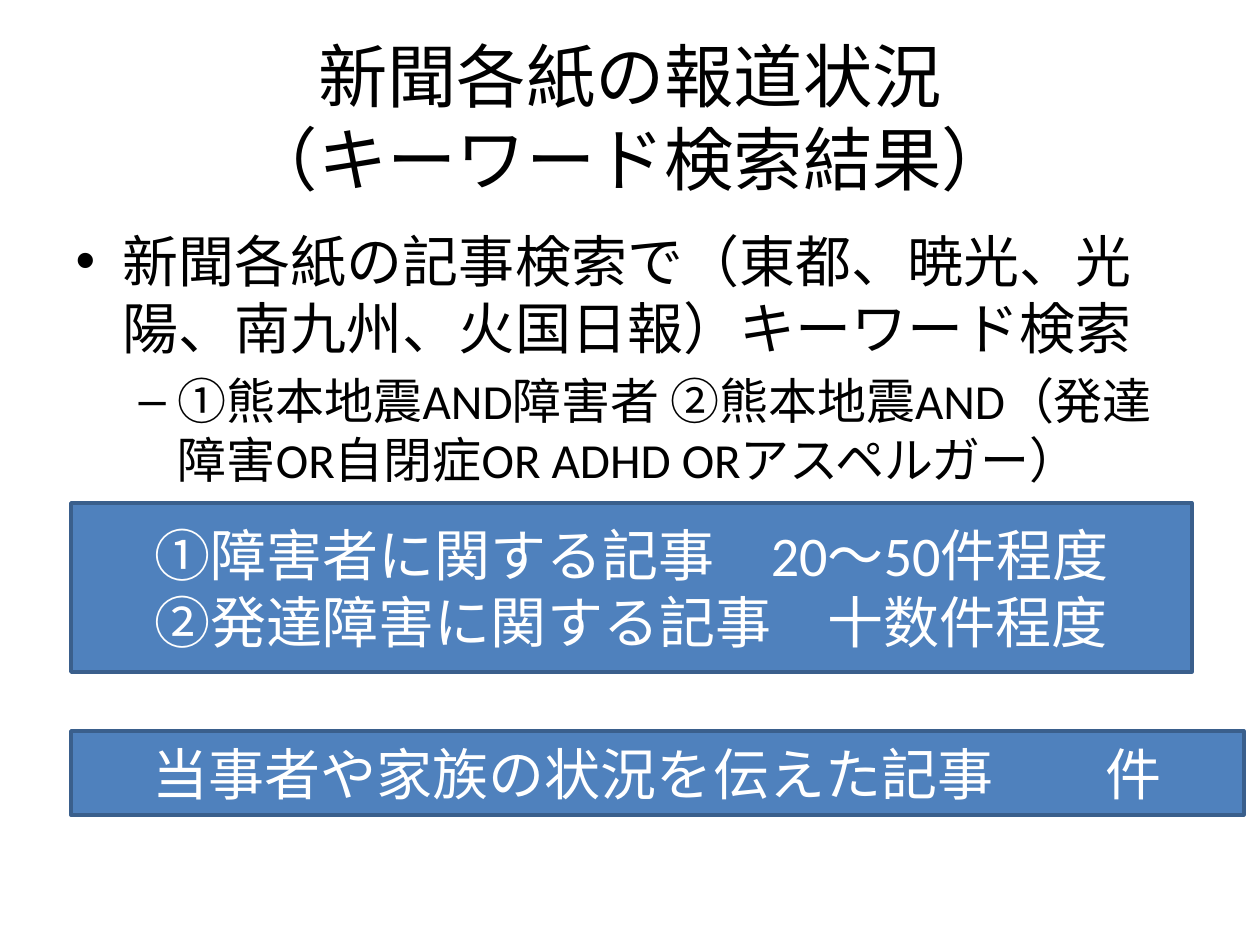
from pptx import Presentation
from pptx.dml.color import RGBColor
from pptx.enum.shapes import MSO_SHAPE as Shape
from pptx.enum.text import MSO_ANCHOR as Anchor, MSO_AUTO_SIZE as AutoSize, PP_ALIGN as Align
from pptx.util import Emu, Pt

PX = 914400 // 126
BLACK = RGBColor(0x00, 0x00, 0x00)
WHITE = RGBColor(0xFF, 0xFF, 0xFF)
BLUE = RGBColor(0x4F, 0x81, 0xBD)
DARK_BLUE = RGBColor(0x3A, 0x5F, 0x8C)
FONT = "Calibri"

TITLE = "新聞各紙の報道状況\v（キーワード検索結果）"
TITLE_BOX = (63, 38, 1134, 157)
BODY_BOX = (63, 220, 1134, 370)
BODY = [
    (0, 32, "新聞各紙の記事検索で（東都、暁光、光陽、南九州、火国日報）キーワード検索"),
    (1, 28, "①熊本地震AND障害者 ②熊本地震AND（発達障害OR自閉症OR ADHD ORアスペルガー）"),
]
RESULTS = [
    ((71, 503, 1121, 169), ["①障害者に関する記事　20～50件程度", "②発達障害に関する記事　十数件程度"]),
    ((71, 731, 1173, 84), ["当事者や家族の状況を伝えた記事　　件"]),
]


def place(shape, box):
    shape.left, shape.top, shape.width, shape.height = (Emu(value * PX) for value in box)


def style(paragraph, size, color):
    paragraph.font.name = FONT
    paragraph.font.size = Pt(size)
    paragraph.font.color.rgb = color


def fill_text(frame, lines):
    frame.text = "\n".join(lines)
    frame.word_wrap = True
    frame.auto_size = AutoSize.NONE
    return frame.paragraphs


def add_result(slide, box, lines):
    shape = slide.shapes.add_shape(Shape.RECTANGLE, *(Emu(value * PX) for value in box))
    shape.shadow.inherit = False
    shape.fill.solid()
    shape.fill.fore_color.rgb = BLUE
    shape.line.color.rgb = DARK_BLUE
    shape.line.width = Pt(2)
    shape.text_frame.vertical_anchor = Anchor.MIDDLE
    for paragraph in fill_text(shape.text_frame, lines):
        paragraph.alignment = Align.CENTER
        style(paragraph, 32, WHITE)


def main():
    presentation = Presentation()
    presentation.slide_width = Emu(1260 * PX)
    presentation.slide_height = Emu(945 * PX)
    slide = presentation.slides.add_slide(presentation.slide_layouts[1])

    title, body = slide.placeholders
    place(title, TITLE_BOX)
    style(fill_text(title.text_frame, [TITLE])[0], 39.6, BLACK)

    place(body, BODY_BOX)
    paragraphs = fill_text(body.text_frame, [text for _, _, text in BODY])
    for paragraph, (level, size, _) in zip(paragraphs, BODY):
        paragraph.level = level
        style(paragraph, size, BLACK)

    for box, lines in RESULTS:
        add_result(slide, box, lines)
    presentation.save("out.pptx")


if __name__ == "__main__":
    main()
